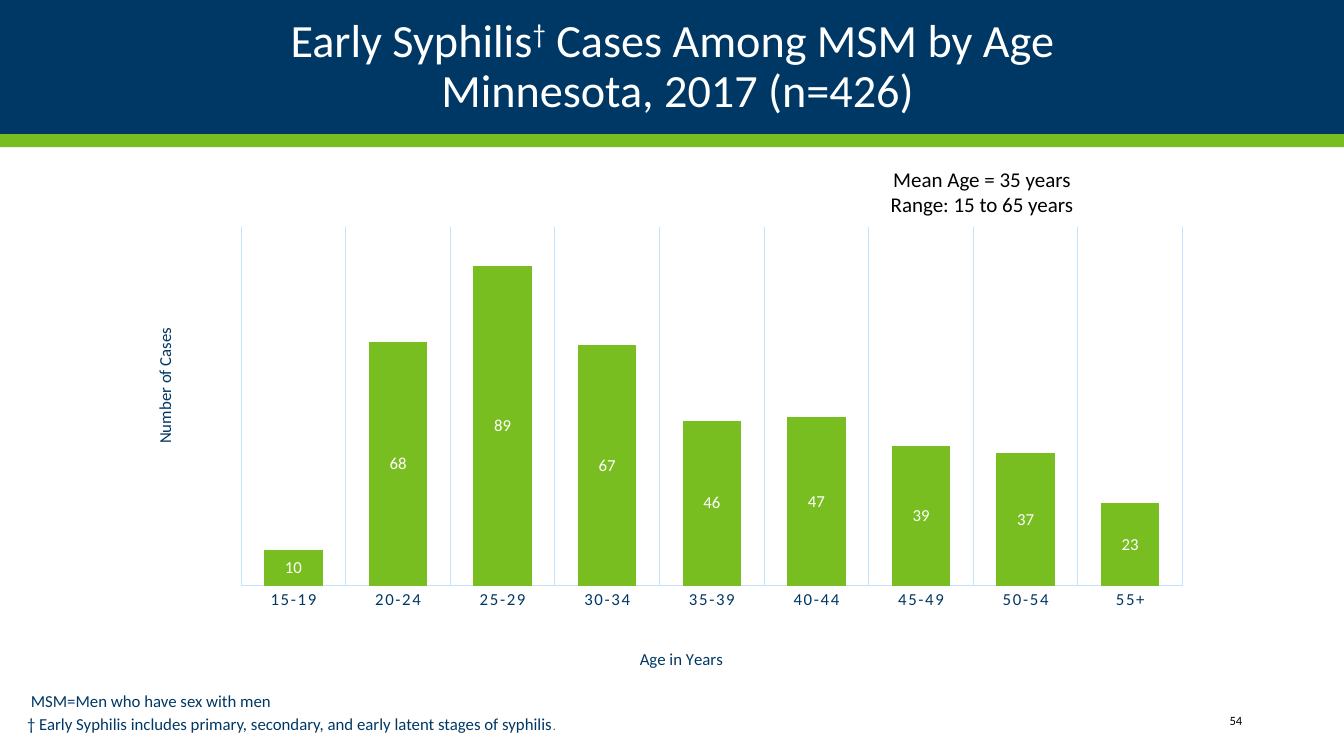
from lxml import etree
from pptx import Presentation
from pptx import util as u
from pptx.chart import data as chart_data
from pptx.dml import color
from pptx.enum import chart as ch, shapes, text
from pptx.oxml import ns

NAVY, GREEN, PALE, WHITE, BLACK = "003865", "78BE21", "C2E4FF", "FFFFFF", "000000"
FONT = "Calibri"
BANDS = [(0, 1.33, NAVY), (1.33, 0.13, GREEN)]
CASES = {"15-19": 10, "20-24": 68, "25-29": 89, "30-34": 67, "35-39": 46,
         "40-44": 47, "45-49": 39, "50-54": 37, "55+": 23}
TITLE = [[("Early Syphilis", {}), ("†", {"baseline": 30000}),
          (" Cases Among MSM by Age\n Minnesota, 2017 (n=426)", {})]]
NOTES = [[(" ", {"fill": BLACK}), ("MSM=Men who have sex with men", {})],
         [("† Early Syphilis includes primary, secondary, and early latent stages of syphilis", {}),
          (".", {"size": 9, "name": "Arial Narrow"})]]
AGES = [[("Mean Age = 35 years", {})], [("Range: 15 to 65 years", {})]]
NUMBER = [[("54", {})]]
PLOT_LAYOUT = {"layoutTarget": "inner", "xMode": "edge", "yMode": "edge",
               "x": 0.114, "y": 0.068, "w": 0.871, "h": 0.706}
AGE_LAYOUT = {"xMode": "edge", "yMode": "edge", "x": 0.48, "y": 0.89}
COUNT_LAYOUT = {"xMode": "edge", "yMode": "edge", "x": 0.03, "y": 0.26}


def rgb(value):
    return color.RGBColor.from_string(value)


def style(font, size, fill, name=FONT):
    font.size, font.name, font.bold = u.Pt(size), name, False
    font.color.rgb = rgb(fill)


def add_text(page, area, paragraphs, size, fill=BLACK, align="LEFT", anchor="TOP",
             spacing=1.0, before=0):
    box = page.shapes.add_textbox(*map(u.Inches, area))
    frame = box.text_frame
    frame.word_wrap = True
    frame.vertical_anchor = text.MSO_ANCHOR[anchor]
    for index, spans in enumerate(paragraphs):
        para = frame.paragraphs[0] if index == 0 else frame.add_paragraph()
        para.alignment = text.PP_ALIGN[align]
        para.line_spacing = spacing
        para.space_before = u.Pt(before)
        for words, extra in spans:
            for row, line in enumerate(words.split("\n")):
                if row:
                    para.add_line_break()
                span = para.add_run()
                span.text = line
                style(span.font, extra.get("size", size), extra.get("fill", fill),
                      extra.get("name", FONT))
                if "baseline" in extra:
                    span.font._element.set("baseline", str(extra["baseline"]))


def place(parent, values, after=None):
    for old in parent.findall(ns.qn("c:layout")):
        parent.remove(old)
    layout = etree.Element(ns.qn("c:layout"))
    manual = etree.SubElement(layout, ns.qn("c:manualLayout"))
    for key, value in values.items():
        etree.SubElement(manual, ns.qn("c:" + key)).set("val", str(value))
    parent.insert(0 if after is None else parent.index(after) + 1, layout)


def title_axis(axis, words, layout):
    frame = axis.axis_title.text_frame
    frame.text = words
    style(frame.paragraphs[0].runs[0].font, 12, NAVY)
    element = axis.axis_title._element
    place(element, layout, element.find(ns.qn("c:tx")))
    return frame


def add_case_chart(page):
    table = chart_data.CategoryChartData()
    table.categories = list(CASES)
    table.add_series("Series 1", list(CASES.values()))
    chart = page.shapes.add_chart(ch.XL_CHART_TYPE.COLUMN_STACKED,
                                  *map(u.Inches, (1.17, 1.91, 10.72, 5.04)), table).chart
    style(chart.font, 10, NAVY)
    chart.has_legend = chart.has_title = False
    place(chart._chartSpace.chart.plotArea, PLOT_LAYOUT)

    plot = chart.plots[0]
    plot.gap_width, plot.overlap, plot.vary_by_categories = 79, 100, False
    bars = plot.series[0]
    bars.format.fill.solid()
    bars.format.fill.fore_color.rgb = rgb(GREEN)
    labels = bars.data_labels
    labels.show_value = True
    labels.position = ch.XL_LABEL_POSITION.CENTER
    style(labels.font, 12, WHITE)

    ages, counts = chart.category_axis, chart.value_axis
    ages.major_tick_mark = ch.XL_TICK_MARK.NONE
    ages.has_major_gridlines = True
    for line in (ages.format.line, ages.major_gridlines.format.line):
        line.color.rgb, line.width = rgb(PALE), u.Pt(0.75)
    style(ages.tick_labels.font, 12, NAVY)
    ages.tick_labels.font._element.set("spc", "120")
    title_axis(ages, "Age in Years", AGE_LAYOUT)

    counts.minimum_scale, counts.maximum_scale = 0, 100
    counts.has_major_gridlines = False
    counts.visible = False
    frame = title_axis(counts, "Number of Cases", COUNT_LAYOUT)
    frame._txBody.bodyPr.set("rot", "-5400000")
    frame._txBody.bodyPr.set("vert", "horz")


def main():
    deck = Presentation()
    deck.slide_width, deck.slide_height = u.Inches(13.33), u.Inches(7.5)
    page = deck.slides.add_slide(deck.slide_layouts[6])
    for top, height, fill in BANDS:
        band = page.shapes.add_shape(shapes.MSO_SHAPE.RECTANGLE, 0, u.Inches(top),
                                     deck.slide_width, u.Inches(height))
        band.shadow.inherit = False
        band.fill.solid()
        band.fill.fore_color.rgb = rgb(fill)
        band.line.fill.background()
    add_text(page, (0.92, 0.17, 11.5, 1), TITLE, 33, WHITE, "CENTER", "MIDDLE", 0.9)
    add_case_chart(page)
    add_text(page, (0.17, 6.86, 6.5, 0.49), NOTES, 12, NAVY, spacing=0.7, before=6)
    add_text(page, (8.66, 1.6, 2.16, 0.61), AGES, 15, align="CENTER")
    add_text(page, (10.82, 6.95, 1.6, 0.4), NUMBER, 9, align="RIGHT", anchor="MIDDLE")
    deck.save("out.pptx")


if __name__ == "__main__":
    main()
